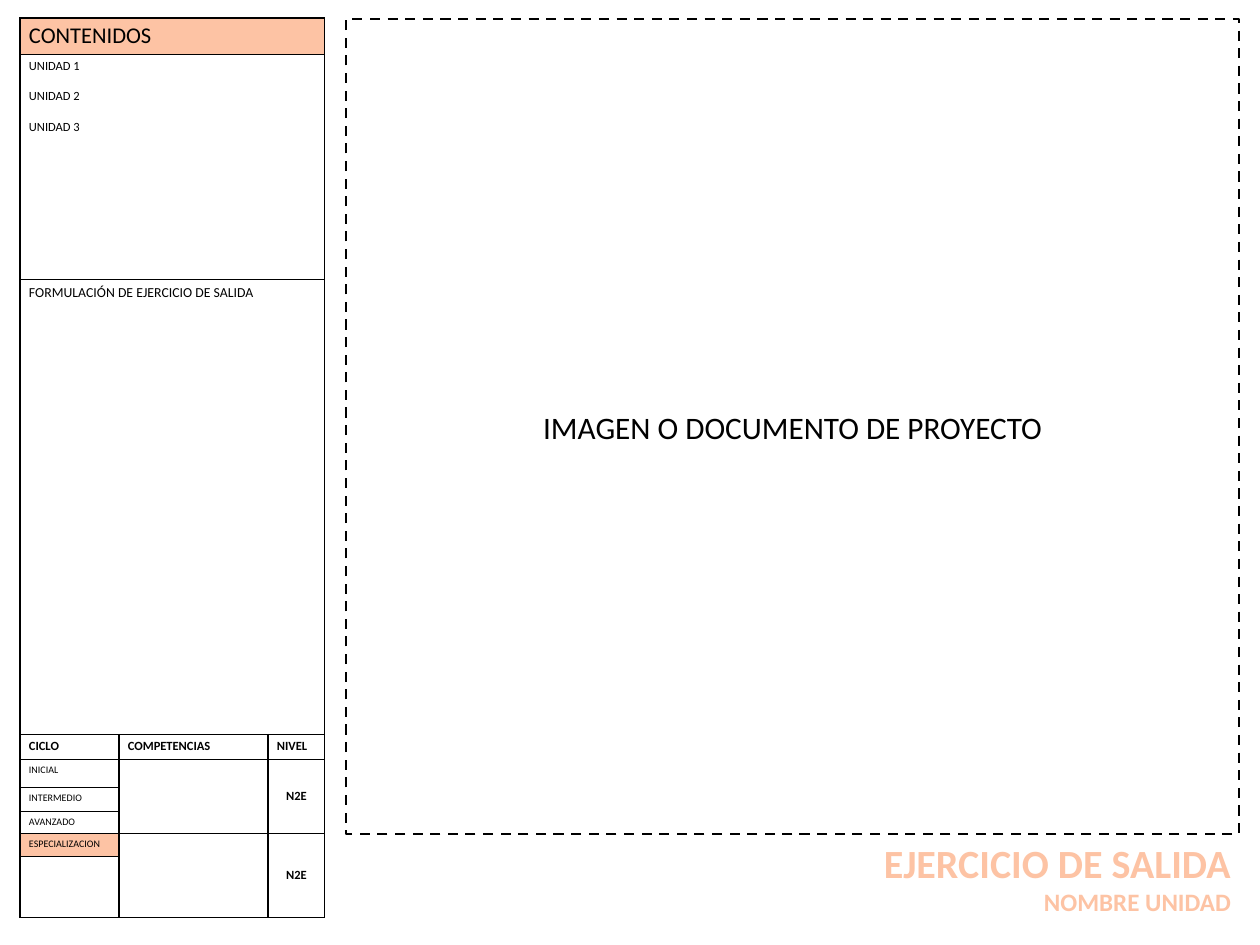
from dataclasses import dataclass

from lxml.etree import SubElement
from pptx import Presentation
from pptx.dml.color import RGBColor
from pptx.enum.dml import MSO_LINE
from pptx.enum.shapes import MSO_SHAPE
from pptx.enum.text import MSO_ANCHOR, MSO_AUTO_SIZE, PP_ALIGN
from pptx.oxml.ns import qn
from pptx.util import Pt

PX = 10160  # EMU per pixel, 90 pixels to the inch


@dataclass(frozen=True)
class Theme:
    font: str = "Calibri"
    ink: RGBColor = RGBColor(0, 0, 0)
    accent: RGBColor = RGBColor(0xFD, 0xC3, 0xA4)
    title: int = 32
    subtitle: int = 20
    frame: int = 25
    heading: int = 18
    statement: int = 11
    body: int = 10
    small: int = 8


theme = Theme()


def format_paragraph(paragraph, size, color, align, bold=False):
    paragraph.alignment = align
    for run in paragraph.runs:
        run.font.name = theme.font
        run.font.size = Pt(size)
        run.font.bold = bold
        run.font.color.rgb = color


def set_borders(cell, widths):
    """Draw the left, right, top and bottom borders, widths in points."""
    properties = cell._tc.get_or_add_tcPr()
    for index, (side, width) in enumerate(zip(("lnL", "lnR", "lnT", "lnB"), widths)):
        line = properties.makeelement(qn(f"a:{side}"), {"w": str(Pt(width))})
        fill = SubElement(line, qn("a:solidFill"))
        SubElement(fill, qn("a:srgbClr"), val=str(theme.ink))
        properties.insert(index, line)


presentation = Presentation()
presentation.slide_width = 1260 * PX
presentation.slide_height = 945 * PX
slide = presentation.slides.add_slide(presentation.slide_layouts[5])

# Title and unit name, bottom right
title = slide.shapes.title
title.left, title.top, title.width, title.height = 685 * PX, 834 * PX, 555 * PX, 88 * PX
title_frame = title.text_frame
title_frame.text = "EJERCICIO DE SALIDA\nNOMBRE UNIDAD"
title_frame.auto_size = MSO_AUTO_SIZE.NONE
title_frame.vertical_anchor = MSO_ANCHOR.TOP
for paragraph, size in zip(title_frame.paragraphs, (theme.title, theme.subtitle)):
    format_paragraph(paragraph, size, theme.accent, PP_ALIGN.RIGHT, bold=True)

# Dashed frame for the project image
frame = slide.shapes.add_shape(
    MSO_SHAPE.RECTANGLE, 346 * PX, 19 * PX, 893 * PX, 815 * PX)
frame.shadow.inherit = False
frame.fill.background()
frame.line.color.rgb = theme.ink
frame.line.width = Pt(2)
frame.line.dash_style = MSO_LINE.DASH
frame.text_frame.text = "IMAGEN O DOCUMENTO DE PROYECTO"
frame.text_frame.vertical_anchor = MSO_ANCHOR.MIDDLE
format_paragraph(frame.text_frame.paragraphs[0], theme.frame, theme.ink, PP_ALIGN.CENTER)

# Contents table
column_widths = (99, 149, 57)
row_heights = (36, 225, 455, 25, 28, 24, 22, 23, 61)
table = slide.shapes.add_table(
    len(row_heights), len(column_widths), 20 * PX, 18 * PX,
    sum(column_widths) * PX, sum(row_heights) * PX).table
table.first_row = False
table.horz_banding = False
for column, width in zip(table.columns, column_widths):
    column.width = width * PX
for row, height in zip(table.rows, row_heights):
    row.height = height * PX

# Full-width rows on top, two merged blocks in each right-hand column
for row in range(3):
    table.cell(row, 0).merge(table.cell(row, 2))
for column in (1, 2):
    table.cell(4, column).merge(table.cell(6, column))
    table.cell(7, column).merge(table.cell(8, column))

# Text by cell: wording, size, bold
cell_texts = {
    (0, 0): ("CONTENIDOS", theme.heading, False),
    (1, 0): ("UNIDAD 1\nUNIDAD 2\nUNIDAD 3", theme.body, False),
    (2, 0): ("FORMULACIÓN DE EJERCICIO DE SALIDA", theme.statement, False),
    (3, 0): ("CICLO", theme.body, True),
    (3, 1): ("COMPETENCIAS", theme.body, True),
    (3, 2): ("NIVEL", theme.body, True),
    (4, 0): ("INICIAL", theme.small, False),
    (5, 0): ("INTERMEDIO", theme.small, False),
    (6, 0): ("AVANZADO", theme.small, False),
    (7, 0): ("ESPECIALIZACION", theme.small, False),
    (4, 2): ("N2E", theme.body, True),
    (7, 2): ("N2E", theme.body, True),
}
for (row, column), (text, size, bold) in cell_texts.items():
    cell = table.cell(row, column)
    cell.text_frame.text = text
    is_level = text == "N2E"
    if is_level:
        cell.vertical_anchor = MSO_ANCHOR.MIDDLE
    align = PP_ALIGN.CENTER if is_level else PP_ALIGN.JUSTIFY
    for paragraph in cell.text_frame.paragraphs:
        format_paragraph(paragraph, size, theme.ink, align, bold)
for paragraph in table.cell(1, 0).text_frame.paragraphs[:-1]:
    paragraph.space_after = Pt(12)

# Fills and borders: thin lines between units and between cycles
thin_below = {(1, 0), (1, 1), (1, 2), (4, 0), (5, 0), (6, 0), (7, 0), (8, 0)}
for row in range(len(row_heights)):
    for column in range(len(column_widths)):
        cell = table.cell(row, column)
        if (row, column) in ((0, 0), (7, 0)):
            cell.fill.solid()
            cell.fill.fore_color.rgb = theme.accent
        else:
            cell.fill.background()
        top = 0.5 if (row - 1, column) in thin_below else 1
        bottom = 0.5 if (row, column) in thin_below else 1
        set_borders(cell, (1, 1, top, bottom))
        # Small type in empty cells keeps the rows low
        if not cell.text_frame.text:
            SubElement(cell.text_frame.paragraphs[0]._p, qn("a:endParaRPr"),
                       sz=str(theme.small * 100))

presentation.save("out.pptx")
